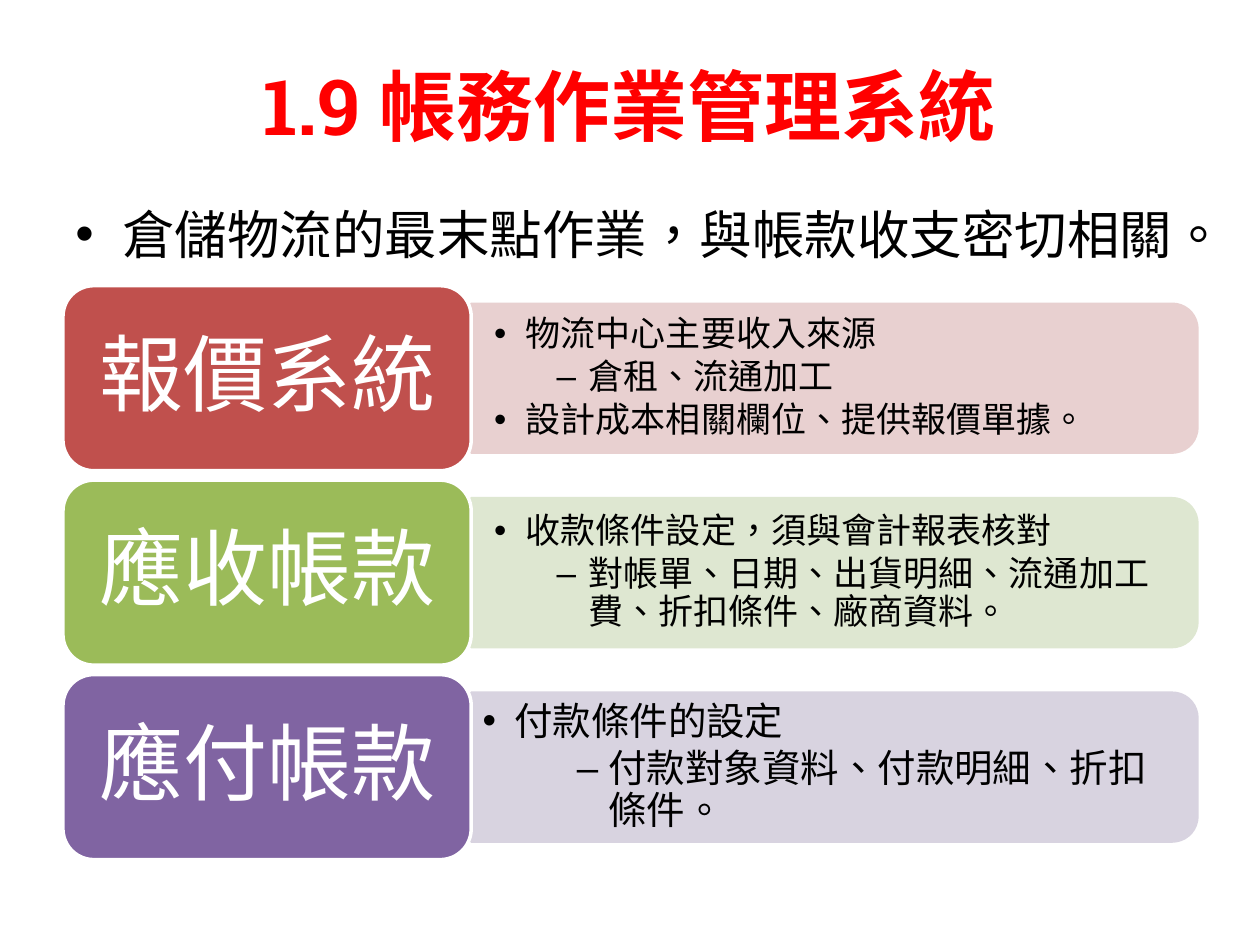
import math
from dataclasses import dataclass

from lxml import etree
from pptx import Presentation
from pptx.dml.color import RGBColor
from pptx.enum import lang, shapes, text
from pptx.oxml import ns
from pptx.util import Cm, Pt


@dataclass(frozen=True)
class Theme:
    font: str = "Roboto Slab"
    title: str = "FF0000"
    ink: str = "000000"
    paper: str = "FFFFFF"
    title_size: int = 44
    intro_size: int = 30
    label_size: int = 48
    outline: int = 2


@dataclass(frozen=True)
class Row:
    label: str
    dark: str
    pale: str
    size: int
    insets: tuple
    points: tuple


THEME = Theme()
ROOMY = (0.46, 0.38, 0.61, 0.38)
TIGHT = (0.23, 0.25, 0.38, 0.25)
LABEL_INSETS = (0.4, 0.25, 0.4, 0.25)
BULLETS = {1: ("•", 0.64), 2: ("–", 1.9), 3: ("–", 2.54)}

ROWS = (
    Row("報價系統", "C0504D", "E8D0D0", 20, ROOMY, (
        (1, "物流中心主要收入來源"),
        (2, "倉租、流通加工"),
        (1, "設計成本相關欄位、提供報價單據。"),
    )),
    Row("應收帳款", "9BBB59", "DEE7D1", 20, ROOMY, (
        (1, "收款條件設定，須與會計報表核對"),
        (2, "對帳單、日期、出貨明細、流通加工費、折扣條件、廠商資料。"),
    )),
    Row("應付帳款", "8064A2", "D8D3E0", 22, TIGHT, (
        (1, "付款條件的設定"),
        (3, "付款對象資料、付款明細、折扣條件。"),
    )),
)

LABEL_LEFT, LABEL_TOP, LABEL_WIDTH, LABEL_HEIGHT = 1.27, 5.76, 8.23, 3.73
PANEL_LEFT, PANEL_WIDTH, PANEL_HEIGHT = 9.5, 14.63, 2.98
PANEL_RADIUS = 0.5
ROW_PITCH = 3.92


def write(paragraph, wording, size, color, bold=False):
    paragraph.text = wording
    for run in paragraph.runs:
        font = run.font
        font.name, font.size, font.bold = THEME.font, Pt(size), bold
        font.color.rgb = RGBColor.from_string(color)
        font.language_id = lang.MSO_LANGUAGE_ID.TRADITIONAL_CHINESE


def add_bullet(paragraph, mark, margin, hanging):
    properties = paragraph._p.get_or_add_pPr()
    properties.set("marL", str(Cm(margin)))
    properties.set("indent", str(-Cm(hanging)))
    etree.SubElement(properties, ns.qn("a:buFont")).set("typeface", "Arial")
    etree.SubElement(properties, ns.qn("a:buChar")).set("char", mark)


def set_frame(frame, anchor, insets=(0.25, 0.13, 0.25, 0.13)):
    frame.word_wrap = True
    frame.vertical_anchor = anchor
    (frame.margin_left, frame.margin_top,
     frame.margin_right, frame.margin_bottom) = map(Cm, insets)


def paint(shape, fill, line):
    shape.shadow.inherit = False
    shape.line.width = Pt(THEME.outline)
    shape.fill.solid()
    for target, color in ((shape.fill.fore_color, fill), (shape.line.color, line)):
        target.rgb = RGBColor.from_string(color)


def add_text_box(slide, left, top, width, height, anchor):
    frame = slide.shapes.add_textbox(Cm(left), Cm(top), Cm(width), Cm(height)).text_frame
    set_frame(frame, anchor)
    return frame.paragraphs[0]


def add_title(slide):
    title = add_text_box(slide, 1.27, 0.53, 22.86, 3.18, text.MSO_ANCHOR.MIDDLE)
    title.alignment = text.PP_ALIGN.CENTER
    write(title, "1.9 帳務作業管理系統", THEME.title_size, THEME.title, bold=True)


def add_intro(slide):
    intro = add_text_box(slide, 1.27, 3.94, 22.86, 12.57, text.MSO_ANCHOR.TOP)
    add_bullet(intro, "•", 0.95, 0.95)
    write(intro, "倉儲物流的最末點作業，與帳款收支密切相關。",
          THEME.intro_size, THEME.ink)


def corner(center_x, center_y, start):
    angles = (math.radians(start + step) for step in range(0, 91, 10))
    return [(Cm(center_x + PANEL_RADIUS * math.cos(angle)),
             Cm(center_y + PANEL_RADIUS * math.sin(angle))) for angle in angles]


def add_panel(slide, row, top):
    right, bottom = PANEL_LEFT + PANEL_WIDTH, top + PANEL_HEIGHT
    arc_x = right - PANEL_RADIUS
    builder = slide.shapes.build_freeform(Cm(PANEL_LEFT), Cm(top))
    builder.add_line_segments(
        corner(arc_x, top + PANEL_RADIUS, -90)
        + corner(arc_x, bottom - PANEL_RADIUS, 0)
        + [(Cm(PANEL_LEFT), Cm(bottom))], close=True)
    panel = builder.convert_to_shape()
    paint(panel, row.pale, row.pale)
    frame = panel.text_frame
    set_frame(frame, text.MSO_ANCHOR.MIDDLE, row.insets)
    frame.text = "\n".join(wording for _, wording in row.points)
    for paragraph, (level, wording) in zip(frame.paragraphs, row.points):
        paragraph.level = level
        paragraph.alignment = text.PP_ALIGN.LEFT
        mark, margin = BULLETS[level]
        add_bullet(paragraph, mark, margin, 0.64)
        paragraph.line_spacing = 0.9
        paragraph.space_after = Pt(row.size * 0.15)
        write(paragraph, wording, row.size, THEME.ink)


def add_label(slide, row, top):
    label = slide.shapes.add_shape(
        shapes.MSO_SHAPE.ROUNDED_RECTANGLE,
        Cm(LABEL_LEFT), Cm(top), Cm(LABEL_WIDTH), Cm(LABEL_HEIGHT))
    paint(label, row.dark, THEME.paper)
    set_frame(label.text_frame, text.MSO_ANCHOR.MIDDLE, LABEL_INSETS)
    caption = label.text_frame.paragraphs[0]
    caption.alignment = text.PP_ALIGN.CENTER
    caption.line_spacing = 0.9
    caption.space_after = Pt(THEME.label_size * 0.35)
    write(caption, row.label, THEME.label_size, THEME.paper)


def main():
    deck = Presentation()
    deck.slide_width, deck.slide_height = Cm(25.4), Cm(19.05)
    slide = deck.slides.add_slide(deck.slide_layouts[6])
    add_title(slide)
    for index, row in enumerate(ROWS):
        top = LABEL_TOP + index * ROW_PITCH
        add_panel(slide, row, top + (LABEL_HEIGHT - PANEL_HEIGHT) / 2)
        add_label(slide, row, top)
    add_intro(slide)
    deck.save("out.pptx")


if __name__ == "__main__":
    main()
